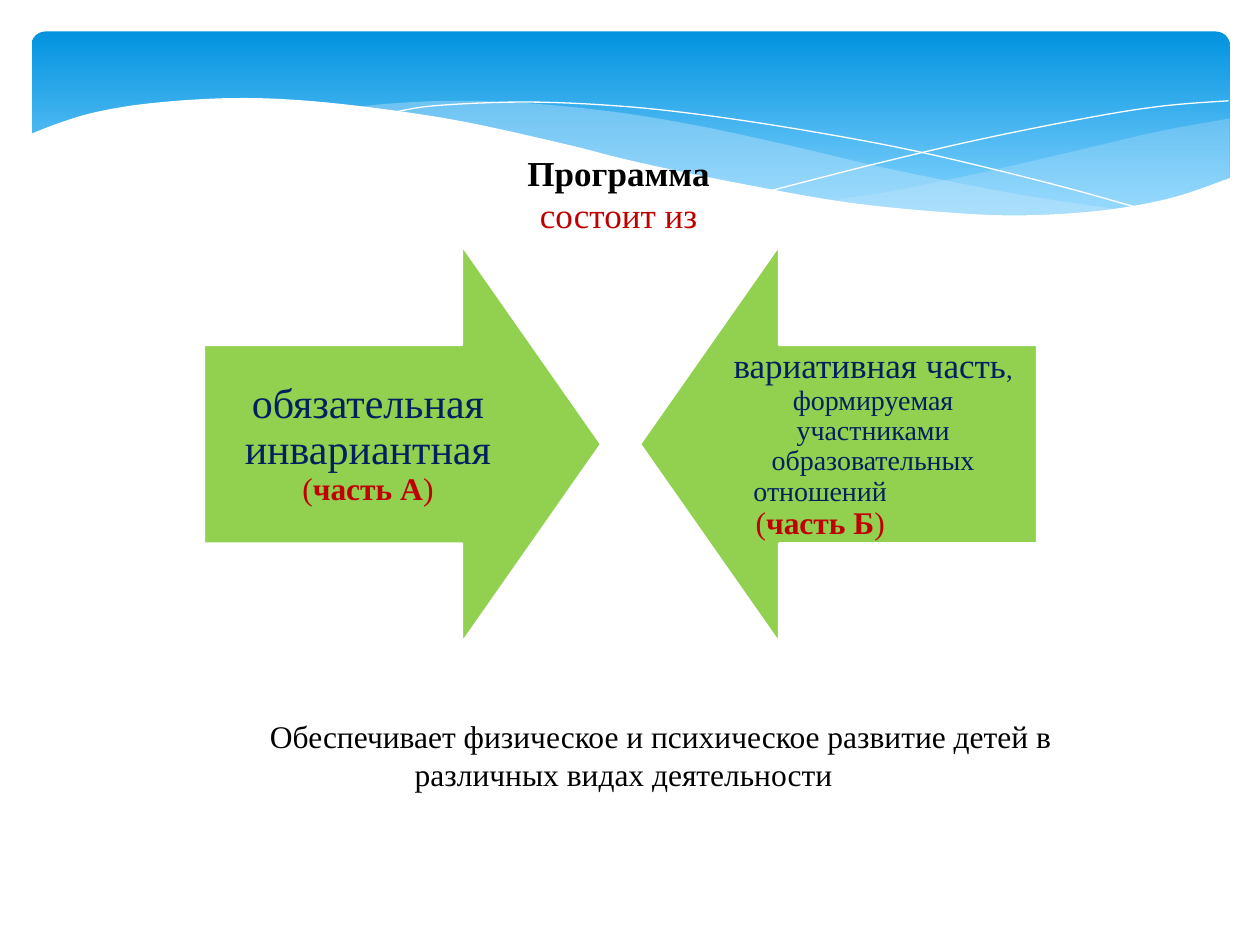
from dataclasses import dataclass
from typing import Optional

from lxml.etree import SubElement
from pptx import Presentation
from pptx.dml.color import RGBColor
from pptx.enum.shapes import MSO_SHAPE as Preset
from pptx.enum.text import MSO_ANCHOR as Anchor, PP_ALIGN as Align
from pptx.oxml.ns import qn
from pptx.util import Inches, Pt

Point = tuple[float, float]


@dataclass(frozen=True)
class Theme:
    font: str = "Times New Roman"
    black: str = "000000"
    white: str = "FFFFFF"
    red: str = "C00000"
    navy: str = "002060"
    green: str = "92D050"
    sky_top: str = "0293E0"
    sky_bottom: str = "83D3FE"
    haze: str = "C6E7FC"
    large: float = 24
    title: float = 20
    body: float = 18
    detail: float = 16
    comma: float = 15


THEME = Theme()


@dataclass(frozen=True)
class Run:
    text: str
    size: float
    color: str
    bold: bool = False


@dataclass(frozen=True)
class Line:
    runs: list[Run]
    first_indent: float = 0
    right_margin: float = 0


@dataclass(frozen=True)
class Wave:
    """A smooth curve; corners close it into a filled area."""
    curve: list[Point]
    corners: tuple[Point, ...] = ()
    fill: Optional[str] = None
    alpha: int = 100


@dataclass(frozen=True)
class ArrowBlock:
    left: float
    rotation: int
    text_left: float
    inset: float
    lines: list[Line]


def smooth(points: list[Point], steps: int = 6) -> list[Point]:
    """Catmull-Rom curve through the points."""
    padded = [points[0], *points, points[-1]]
    result = [points[0]]
    for a, b, c, d in zip(padded, padded[1:], padded[2:], padded[3:]):
        for step in range(1, steps + 1):
            t = step / steps
            result.append(tuple(
                0.5 * (2 * q + (r - p) * t + (2 * p - 5 * q + 4 * r - s) * t ** 2
                       + (3 * q - p - 3 * r + s) * t ** 3)
                for p, q, r, s in zip(a, b, c, d)))
    return result


def paint(shape, color: str, alpha: int = 100) -> None:
    shape.fill.solid()
    shape.fill.fore_color.rgb = RGBColor.from_string(color)
    if alpha < 100:
        fill_color = shape.fill._xPr.find(qn("a:solidFill"))[0]
        SubElement(fill_color, qn("a:alpha"), val=str(alpha * 1000))


def outline(shape, color: str, width: float) -> None:
    shape.line.color.rgb = RGBColor.from_string(color)
    shape.line.width = Pt(width)


def add_wave(slide, wave: Wave) -> None:
    points = [(Inches(x), Inches(y)) for x, y in [*smooth(wave.curve), *wave.corners]]
    builder = slide.shapes.build_freeform(*points[0])
    builder.add_line_segments(points[1:], close=wave.fill is not None)
    shape = builder.convert_to_shape()
    shape.shadow.inherit = False
    if wave.fill:
        paint(shape, wave.fill, wave.alpha)
        shape.line.fill.background()
    else:
        shape.fill.background()
        outline(shape, THEME.white, 0)


def add_text(slide, lines: list[Line], *, left: float, top: float, width: float,
             height: float, anchor=Anchor.TOP, inset: Optional[float] = None,
             wrap: bool = True, spacing: float = 1.0) -> None:
    frame = slide.shapes.add_textbox(
        Inches(left), Inches(top), Inches(width), Inches(height)).text_frame
    frame.word_wrap = wrap
    frame.vertical_anchor = anchor
    if inset is not None:
        frame.margin_left = frame.margin_right = Inches(inset)
        frame.margin_top = frame.margin_bottom = Inches(inset)
    for index, line in enumerate(lines):
        paragraph = frame.add_paragraph() if index else frame.paragraphs[0]
        paragraph.alignment = Align.CENTER
        paragraph.line_spacing = spacing
        properties = paragraph._p.get_or_add_pPr()
        if line.first_indent:
            properties.set("indent", str(Inches(line.first_indent)))
        if line.right_margin:
            properties.set("marR", str(Inches(line.right_margin)))
        for item in line.runs:
            run = paragraph.add_run()
            run.text = item.text
            run.font.name = THEME.font
            run.font.size = Pt(item.size)
            run.font.bold = item.bold
            run.font.color.rgb = RGBColor.from_string(item.color)


def add_header(slide) -> None:
    panel = slide.shapes.add_shape(
        Preset.ROUNDED_RECTANGLE, Inches(0.25), Inches(0.25), Inches(9.51), Inches(1.56))
    panel.adjustments[0] = 0.071
    panel.shadow.inherit = False
    panel.line.fill.background()
    panel.fill.gradient()
    panel.fill.gradient_angle = 270
    stops = zip(panel.fill.gradient_stops, (0, 0.9), (THEME.sky_top, THEME.sky_bottom))
    for stop, position, color in stops:
        stop.position = position
        stop.color.rgb = RGBColor.from_string(color)
    for wave in WAVES:
        add_wave(slide, wave)


def add_arrow_block(slide, block: ArrowBlock) -> None:
    arrow = slide.shapes.add_shape(
        Preset.DOWN_ARROW, Inches(block.left), Inches(1.95), Inches(3.15), Inches(3.15))
    arrow.adjustments[0] = 0.5
    arrow.adjustments[1] = 0.35
    arrow.rotation = block.rotation
    arrow.shadow.inherit = False
    paint(arrow, THEME.green)
    outline(arrow, THEME.white, 1.25)
    add_text(slide, block.lines, left=block.text_left, top=2.74, width=2.6, height=1.58,
             anchor=Anchor.MIDDLE, inset=block.inset, spacing=0.9)


def part_label(letter: str) -> list[Run]:
    return [Run("(", THEME.body, THEME.red),
            Run(f"часть {letter}", THEME.body, THEME.red, bold=True),
            Run(")", THEME.body, THEME.red)]


WAVES = [
    # Right-hand haze
    Wave([(9.76, 0.94), (9.21, 1.04), (8.61, 1.18), (7.79, 1.37), (7.06, 1.52),
          (6.61, 1.6), (7.05, 1.65), (7.57, 1.7), (8.14, 1.72), (8.63, 1.7),
          (9.13, 1.62), (9.49, 1.52), (9.76, 1.41)], fill=THEME.haze, alpha=29),
    # Middle haze
    Wave([(8.93, 1.67), (8.07, 1.54), (7.06, 1.34), (6.29, 1.16), (5.55, 1),
          (4.89, 0.89), (4.2, 0.82), (3.61, 0.8), (3.13, 0.82), (2.86, 0.86),
          (3.42, 0.94), (4.49, 1.16), (5.66, 1.43), (6.5, 1.58), (7.22, 1.68),
          (7.85, 1.72), (8.38, 1.72), (8.93, 1.67)], fill=THEME.haze, alpha=40),
    # Thin crossing curves
    Wave([(3.09, 0.9), (3.44, 0.84), (4.16, 0.81), (4.89, 0.84), (5.56, 0.91),
          (6.36, 1.03), (7.27, 1.2), (8.31, 1.45), (9.07, 1.66)]),
    Wave([(6.13, 1.51), (6.95, 1.3), (7.76, 1.11), (8.66, 0.93), (9.24, 0.84),
          (9.75, 0.8)]),
    # White foreground
    Wave([(9.77, 1.41), (9.3, 1.57), (8.75, 1.67), (8.09, 1.71), (7.44, 1.68),
          (6.68, 1.6), (5.79, 1.44), (5.03, 1.28), (4.47, 1.14), (3.65, 0.96),
          (2.92, 0.85), (2.3, 0.79), (1.77, 0.78), (1.19, 0.82), (0.76, 0.89),
          (0.46, 0.98), (0.23, 1.07)],
         corners=((0.23, 2.24), (9.77, 2.24)), fill=THEME.white),
]

ARROW_BLOCKS = [
    ArrowBlock(1.62, 270, 1.62, 0.19, [
        Line([Run("обязательная инвариантная ", THEME.large, THEME.navy),
              *part_label("А")])]),
    ArrowBlock(5.08, 90, 5.63, 0.16, [
        Line([Run("вариативная часть", THEME.title, THEME.navy),
              Run(", ", THEME.comma, THEME.navy),
              Run("формируемая участниками образовательных", THEME.detail, THEME.navy)]),
        Line([Run("отношений", THEME.detail, THEME.navy)], right_margin=0.84),
        Line(part_label("Б"))]),
]


def main() -> None:
    presentation = Presentation()
    presentation.slide_width, presentation.slide_height = Inches(10), Inches(7.5)
    slide = presentation.slides.add_slide(presentation.slide_layouts[6])

    add_header(slide)

    # Purpose of the programme
    purpose = "Обеспечивает физическое и психическое развитие детей в различных видах деятельности"
    add_text(slide, [Line([Run(purpose, THEME.body, THEME.black)], first_indent=0.59)],
             left=1.17, top=5.64, width=7.56, height=0.71)

    # Two parts of the programme
    for block in ARROW_BLOCKS:
        add_arrow_block(slide, block)

    # Title
    add_text(slide, [Line([Run("Программа ", THEME.title, THEME.black, bold=True)]),
                     Line([Run("состоит из ", THEME.title, THEME.red)])],
             left=4.08, top=1.15, width=1.73, height=0.77, wrap=False)

    presentation.save("out.pptx")


if __name__ == "__main__":
    main()
